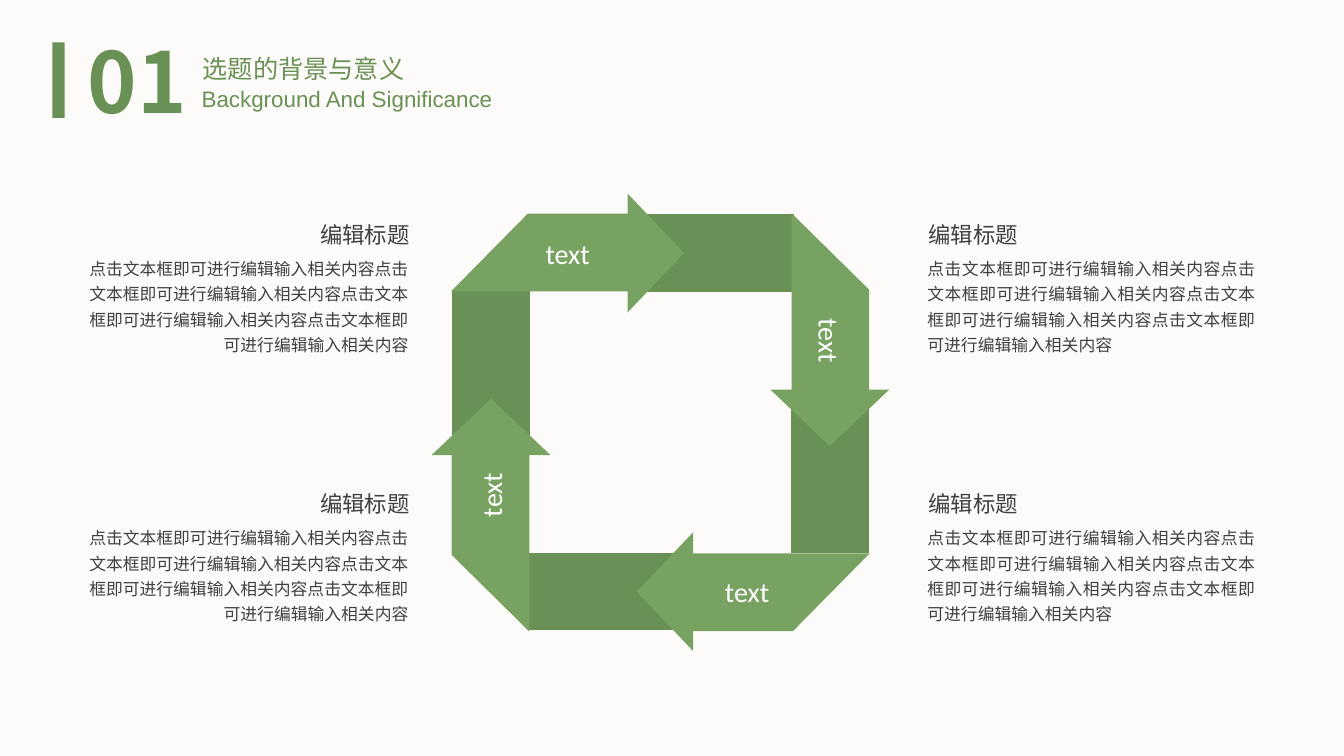
from lxml.etree import SubElement
from pptx import Presentation
from pptx.dml.color import RGBColor
from pptx.enum.shapes import MSO_SHAPE
from pptx.enum.text import MSO_ANCHOR, MSO_AUTO_SIZE, PP_ALIGN
from pptx.oxml.ns import qn
from pptx.util import Inches, Pt

NUMBER = "01"
TITLE = "选题的背景与意义"
SUBTITLE = " Background And Significance"
HEADING = "编辑标题"
BODY = "点击文本框即可进行编辑输入相关内容" * 4
LABELS = [("text", -0.92, 1.58), ("text", -0.81, 1.58),
          ("text", -0.86, 1.75), ("text", -0.72, 1.8)]

DARK, LIGHT, GREY, WHITE, PAPER = "699155", "77A261", "404040", "FFFFFF", "FDFBF9"
CJK = "Noto Sans CJK SC"

CENTER = (6.55, 4.19)
RADIUS = 1.68
BAND_LENGTHS, BAND_WIDTH, BAND_SHIFT = (1.58, 1.54), 0.77, 0.53
ARROW_SIZE, ARROW_SHIFT = (2.31, 1.18), -0.92
ARROW = [(1.75, 0), (2.31, 0.59), (1.75, 1.18), (1.75, 0.97),
         (0, 0.97), (0.76, 0.2), (1.75, 0.2)]

ROWS = (2.14, 4.81)
BODY_DROP = 0.33
COLUMNS = [(9.11, 9.1, PP_ALIGN.LEFT, PP_ALIGN.JUSTIFY),
           (2.67, 0.7, PP_ALIGN.RIGHT, PP_ALIGN.RIGHT)]


def color(value):
    return RGBColor.from_string(value)


def paint(shape, fill):
    shape.shadow.inherit = False
    shape.fill.solid()
    shape.fill.fore_color.rgb = color(fill)
    shape.line.fill.background()


def write(shape, text, size, fill, font=CJK, align=PP_ALIGN.LEFT, spacing=None,
          bold=False, anchor=MSO_ANCHOR.TOP, wrap=True):
    frame = shape.text_frame
    frame.text = text
    frame.word_wrap = wrap
    frame.auto_size = MSO_AUTO_SIZE.SHAPE_TO_FIT_TEXT
    frame.vertical_anchor = anchor
    paragraph = frame.paragraphs[0]
    paragraph.alignment = align
    if spacing:
        paragraph.line_spacing = spacing
    run = paragraph.runs[0]
    run.font.size = Pt(size)
    run.font.bold = bold
    run.font.color.rgb = color(fill)
    run.font.name = font
    SubElement(run._r.get_or_add_rPr(), qn("a:ea")).set("typeface", font)


def add_text(slide, box, *content, **style):
    shape = slide.shapes.add_textbox(*map(Inches, box))
    write(shape, *content, **style)
    return shape


def ring_box(quarter, along, width, height):
    """Return the box whose centre is turned clockwise around the ring by quarters."""
    x, y = along, -RADIUS
    for _ in range(quarter):
        x, y = -y, x
    return CENTER[0] + x - width / 2, CENTER[1] + y - height / 2, width, height


def add_outline(slide, box, points, fill, rotation):
    corners = [(Inches(box[0] + x), Inches(box[1] + y)) for x, y in points]
    builder = slide.shapes.build_freeform(*corners[0], scale=1.0)
    builder.add_line_segments(corners[1:], close=True)
    shape = builder.convert_to_shape()
    paint(shape, fill)
    shape.rotation = rotation


def add_header(slide):
    title = slide.shapes.title
    title.left, title.top, title.width, title.height = map(Inches, (1.91, 0.18, 2.22, 0.62))
    write(title, TITLE, 18, DARK, spacing=2.0, wrap=False)
    bar = slide.shapes.add_shape(MSO_SHAPE.RECTANGLE, *map(Inches, (0.52, 0.42, 0.12, 0.75)))
    paint(bar, DARK)
    add_text(slide, (0.52, 0.24, 1.68, 1.11), NUMBER, 60, DARK,
             align=PP_ALIGN.CENTER, bold=True)
    subtitle = slide.shapes.add_shape(MSO_SHAPE.SNIP_1_RECTANGLE,
                                      *map(Inches, (1.84, 0.8, 5.49, 0.37)))
    subtitle.adjustments[0] = 0
    subtitle.shadow.inherit = False
    subtitle.fill.background()
    subtitle.line.fill.background()
    write(subtitle, SUBTITLE, 16, DARK, font="Arial")


def add_ring(slide):
    for quarter in range(4):
        length = BAND_LENGTHS[quarter % 2]
        band = [(0, 0), (length, 0), (length, BAND_WIDTH), (0, BAND_WIDTH)]
        add_outline(slide, ring_box(quarter, BAND_SHIFT, length, BAND_WIDTH),
                    band, DARK, (quarter * 90 + 180) % 360)
    for quarter, (text, shift, width) in enumerate(LABELS):
        add_outline(slide, ring_box(quarter, ARROW_SHIFT, *ARROW_SIZE),
                    ARROW, LIGHT, quarter * 90)
        label = add_text(slide, ring_box(quarter, shift, width, 0.44), text, 20, WHITE,
                         font="Calibri", align=PP_ALIGN.CENTER, anchor=MSO_ANCHOR.MIDDLE)
        label.rotation = 0 if quarter == 2 else quarter * 90


def add_notes_around(slide):
    for heading_left, body_left, heading_align, body_align in COLUMNS:
        for top in ROWS:
            add_text(slide, (body_left, top + BODY_DROP, 3.45, 1.11), BODY, 12, GREY,
                     align=body_align, spacing=1.25)
            add_text(slide, (heading_left, top, 1.49, 0.37), HEADING, 16, GREY,
                     align=heading_align)


def main():
    presentation = Presentation()
    presentation.slide_width, presentation.slide_height = Inches(13.33), Inches(7.5)
    slide = presentation.slides.add_slide(presentation.slide_layouts[5])
    slide.background.fill.solid()
    slide.background.fill.fore_color.rgb = color(PAPER)
    add_header(slide)
    add_ring(slide)
    add_notes_around(slide)
    presentation.save("out.pptx")


if __name__ == "__main__":
    main()
